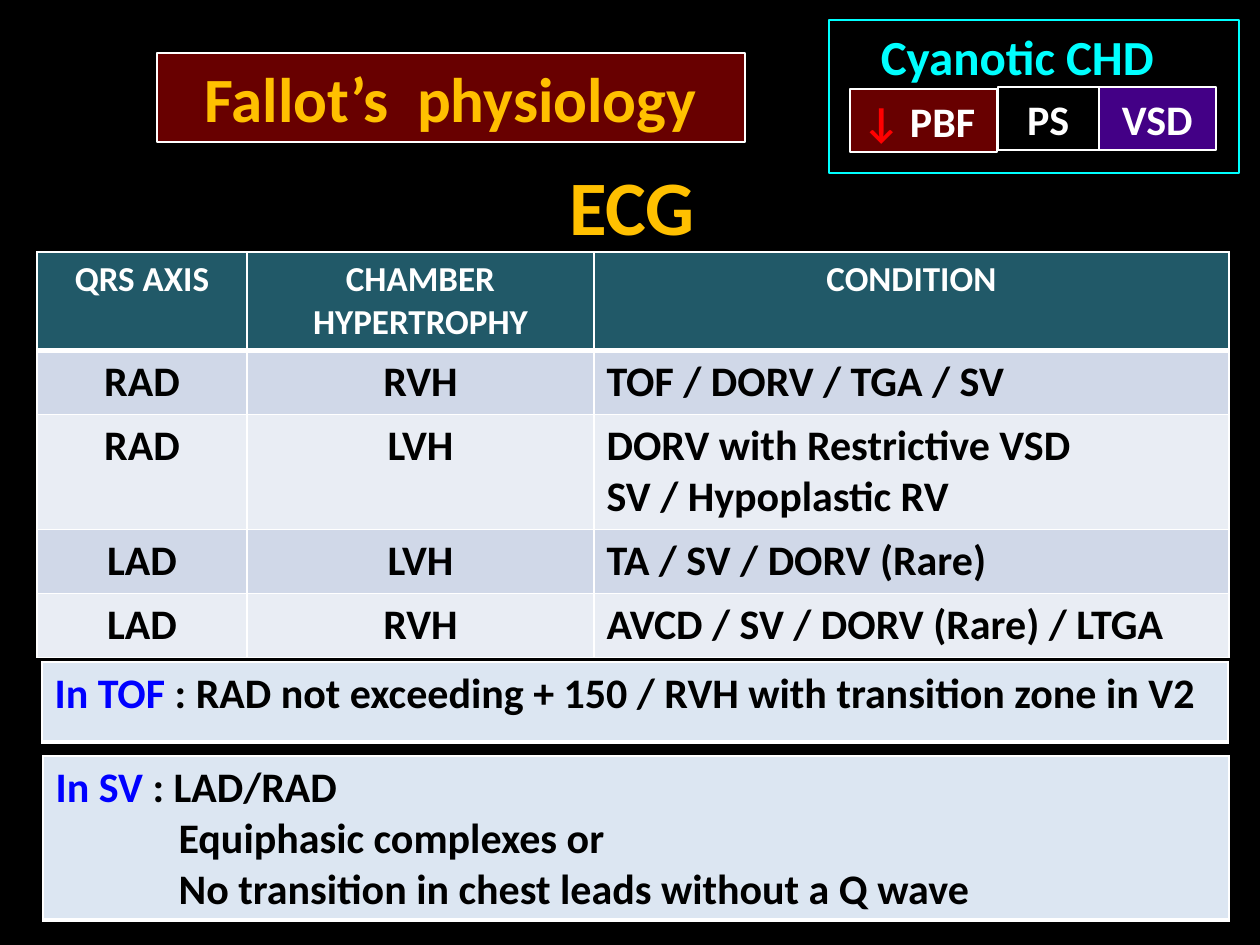
"""Build the ECG slide on Fallot's physiology."""
import pptx
import pptx.dml.color
import pptx.enum.shapes
import pptx.enum.text
import pptx.oxml
import pptx.oxml.ns
import pptx.util

PX = 914400 / 126
COLORS = {
    "black": "000000", "white": "FFFFFF", "gold": "FFC000", "cyan": "00FFFF",
    "red": "FF0000", "blue": "0000FF", "maroon": "680000", "purple": "430086",
    "teal": "215968", "band": "D0D8E8", "pale": "E9EDF4", "note": "DCE6F2",
}
RGB = {name: pptx.dml.color.RGBColor.from_string(code) for name, code in COLORS.items()}
CENTER = pptx.enum.text.PP_ALIGN.CENTER
LEFT = pptx.enum.text.PP_ALIGN.LEFT


def write(frame, lines, size, align, hanging=0):
    for number, runs in enumerate(lines):
        paragraph = frame.paragraphs[0] if number == 0 else frame.add_paragraph()
        paragraph.alignment = align
        if number and hanging:
            properties = paragraph._p.get_or_add_pPr()
            properties.set("marL", str(round(hanging * PX)))
            properties.set("indent", "0")
        for text, color in runs:
            run = paragraph.add_run()
            run.text = text
            style = {"name": "Calibri", "size": pptx.util.Pt(size), "bold": True}
            for key, value in style.items():
                setattr(run.font, key, value)
            run.font.color.rgb = RGB[color]


def add_grid(box, widths, heights, thick_row):
    grid = slide.shapes.add_table(
        len(heights), len(widths), *[round(value * PX) for value in box]).table
    for key in ("first_row", "horz_banding"):
        setattr(grid, key, False)
    for tracks, sizes, key in ((grid.columns, widths, "width"), (grid.rows, heights, "height")):
        for track, length in zip(tracks, sizes):
            setattr(track, key, round(length * PX))
    for row_number, row in enumerate(grid.rows):
        for cell in row.cells:
            for side in "LRTB":
                thick = (side, row_number) in (("B", thick_row), ("T", thick_row + 1))
                cell._tc.get_or_add_tcPr().append(pptx.oxml.parse_xml(
                    f'<a:ln{side} {pptx.oxml.ns.nsdecls("a")} w="{38100 if thick else 12700}">'
                    f'<a:solidFill><a:srgbClr val="{COLORS["white"]}"/></a:solidFill></a:ln{side}>'))
    return grid


deck = pptx.Presentation()
deck.slide_width = round(1260 * PX)
deck.slide_height = round(945 * PX)
slide = deck.slides.add_slide(deck.slide_layouts[6])
slide.background.fill.solid()
slide.background.fill.fore_color.rgb = RGB["black"]

findings = [
    ("QRS AXIS", "CHAMBER HYPERTROPHY", "CONDITION"),
    ("RAD", "RVH", "TOF / DORV / TGA / SV"),
    ("RAD", "LVH", "DORV with Restrictive VSD\nSV / Hypoplastic RV"),
    ("LAD", "LVH", "TA / SV / DORV (Rare)"),
    ("LAD", "RVH", "AVCD / SV / DORV (Rare) / LTGA"),
]
ecg_grid = add_grid((37, 252, 1192, 405), (210, 347, 635), (98, 64, 115, 64, 64), 0)
for row_number, entries in enumerate(findings):
    header = row_number == 0
    fill = "teal" if header else ("pale", "band")[row_number % 2]
    for column, entry in enumerate(entries):
        cell = ecg_grid.cell(row_number, column)
        cell.fill.solid()
        cell.fill.fore_color.rgb = RGB[fill]
        write(cell.text_frame,
              [[(line, "white" if header else "black")] for line in entry.split("\n")],
              20 if header else 24, CENTER if header or column < 2 else LEFT)

heading = slide.shapes.add_textbox(*[round(value * PX) for value in (553, 152, 158, 106)])
heading.text_frame.word_wrap = False
write(heading.text_frame, [[("ECG", "gold")]], 44, CENTER)

labels = [
    ((829, 20, 410, 153), "black", "cyan", [("Cyanotic CHD", "cyan")], 28, CENTER, 46),
    ((850, 89, 147, 63), "maroon", "white", [("↓", "red"), (" PBF", "white")], 24, LEFT, 13),
    ((998, 87, 101, 63), "black", "white", [("PS", "white")], 24, CENTER, 13),
    ((1099, 87, 117, 63), "purple", "white", [("VSD", "white")], 24, CENTER, 13),
    ((157, 53, 588, 89), "maroon", "white", [("Fallot’s  physiology", "gold")], 36, CENTER, 13),
]
for box, fill, outline, runs, size, align, right_inset in labels:
    label = slide.shapes.add_shape(
        pptx.enum.shapes.MSO_SHAPE.RECTANGLE, *[round(value * PX) for value in box])
    label.shadow.inherit = False
    label.fill.solid()
    label.fill.fore_color.rgb = RGB[fill]
    label.line.color.rgb = RGB[outline]
    label.line.width = pptx.util.Pt(0.75)
    layout = {"word_wrap": True, "margin_right": round(right_inset * PX),
              "vertical_anchor": pptx.enum.text.MSO_ANCHOR.TOP}
    for key, value in layout.items():
        setattr(label.text_frame, key, value)
    write(label.text_frame, [runs], size, align)

notes = [
    ((43, 756, 1186, 164), [
        [("In SV ", "blue"), (": LAD/RAD", "black")],
        [("Equiphasic complexes or", "black")],
        [("No transition in chest leads without a Q wave", "black")],
    ]),
    ((42, 662, 1186, 80), [
        [("In TOF ", "blue"),
         (": RAD not exceeding + 150 / RVH with transition zone in V2", "black")],
    ]),
]
for box, lines in notes:
    remark = add_grid(box, box[2:3], box[3:], 0).cell(0, 0)
    remark.fill.solid()
    remark.fill.fore_color.rgb = RGB["note"]
    write(remark.text_frame, lines, 24, LEFT, 123)

deck.save("out.pptx")
